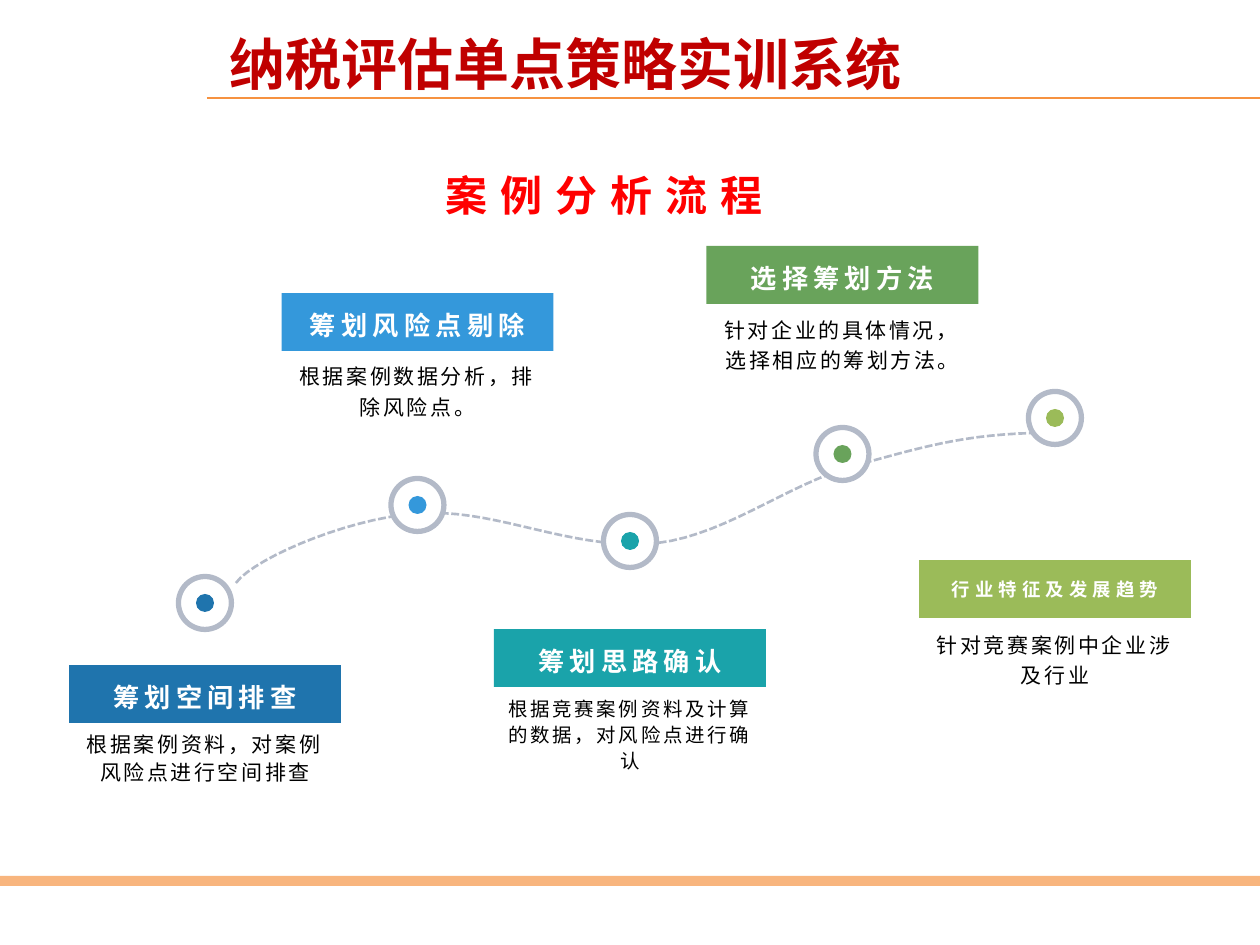
from pptx import Presentation
from pptx.dml.color import RGBColor
from pptx.enum.dml import MSO_LINE
from pptx.enum.shapes import MSO_CONNECTOR, MSO_SHAPE
from pptx.enum.text import MSO_ANCHOR, PP_ALIGN
from pptx.oxml.ns import qn
from pptx.util import Pt
from lxml.etree import SubElement

FONT = "Noto Sans CJK SC"
WHITE = RGBColor(0xFF, 0xFF, 0xFF)
BLACK = RGBColor(0x00, 0x00, 0x00)
RED = RGBColor(0xFF, 0x00, 0x00)
DARK_RED = RGBColor(0xC0, 0x00, 0x00)
ORANGE = RGBColor(0xF6, 0x92, 0x40)
GREY = RGBColor(0xB3, 0xBA, 0xC8)
NAVY = RGBColor(0x1F, 0x74, 0xAD)
BLUE = RGBColor(0x34, 0x98, 0xDB)
TEAL = RGBColor(0x1A, 0xA3, 0xAA)
GREEN = RGBColor(0x69, 0xA3, 0x5B)
LIME = RGBColor(0x9B, 0xBB, 0x59)

TITLE = "纳税评估单点策略实训系统"
HEADING = "案例分析流程"

STEPS = [
    dict(label="筹划空间排查", body="根据案例资料，对案例风险点进行空间排查", color=NAVY,
         node=603, bar=665, gap=0, size=12, spacing=1.1),
    dict(label="筹划风险点剔除", body="根据案例数据分析，排除风险点。", color=BLUE,
         node=505, bar=293, gap=2, size=12, spacing=1.2),
    dict(label="筹划思路确认", body="根据竞赛案例资料及计算的数据，对风险点进行确认", color=TEAL,
         node=541, bar=629, gap=2, size=11.1, spacing=1.1),
    dict(label="选择筹划方法", body="针对企业的具体情况，选择相应的筹划方法。", color=GREEN,
         node=454, bar=246, gap=2, size=12, spacing=1.2),
    dict(label="行业特征及发展趋势", body="针对竞赛案例中企业涉及行业", color=LIME,
         node=418, bar=560, gap=3, size=12, spacing=1.2,
         label_size=10.5, label_spacing=1.0),
]

CURVE = [(236, 583),
         (255, 557), (360, 513), (431, 513),
         (500, 512), (568, 547), (644, 544),
         (718, 542), (785, 484), (857, 465),
         (927, 446), (973, 431), (1067, 433)]
CURVE_PARTS = 16

FIRST_X, STEP_X = 205, 212.5
BAR_W, BAR_H, BODY_H = 272, 58, 93
RING, DOT = 53, 18


def px(n):
    return round(n * 914400 / 126)


def box(x, y, w, h):
    return [px(n) for n in (x, y, w, h)]


def write(sp, text, size, color, bold=False, tracking=0, align=PP_ALIGN.LEFT,
          spacing=1.0, anchor=MSO_ANCHOR.MIDDLE, wrap=True):
    tf = sp.text_frame
    tf.word_wrap, tf.vertical_anchor = wrap, anchor
    p = tf.paragraphs[0]
    p.alignment, p.line_spacing = align, spacing
    r = p.add_run()
    r.text = text
    for name, value in dict(name=FONT, size=Pt(size), bold=bold).items():
        setattr(r.font, name, value)
    r.font.color.rgb = color
    rpr = r._r.get_or_add_rPr()
    if tracking:
        rpr.set("spc", str(round(tracking * 100)))
    SubElement(rpr, qn("a:ea"), typeface=FONT)


def add_filled(kind, x, y, w, h, fill, outline=None):
    sp = shapes.add_shape(kind, *box(x, y, w, h))
    sp.shadow.inherit = False
    sp.fill.solid()
    sp.fill.fore_color.rgb = fill
    if outline is None:
        sp.line.fill.background()
    else:
        sp.line.color.rgb = outline
        sp.line.width = Pt(3)
    return sp


def add_disc(cx, cy, d, fill, outline=None):
    return add_filled(MSO_SHAPE.OVAL, cx - d / 2, cy - d / 2, d, d, fill, outline)


def bezier(points, t):
    weights = ((1 - t) ** 3, 3 * t * (1 - t) ** 2, 3 * t * t * (1 - t), t ** 3)
    return tuple(px(sum(w * p[i] for w, p in zip(weights, points))) for i in (0, 1))


def add_curve():
    points = [bezier(CURVE[i:i + 4], k / CURVE_PARTS)
              for i in range(0, len(CURVE) - 1, 3)
              for k in range(1, CURVE_PARTS + 1)]
    start_x, start_y = (px(n) for n in CURVE[0])
    builder = shapes.build_freeform(start_x, start_y)
    builder.add_line_segments(points, close=False)
    sp = builder.convert_to_shape()
    sp.shadow.inherit = False
    sp.fill.background()
    sp.line.color.rgb = GREY
    sp.line.width = Pt(1.5)
    sp.line.dash_style = MSO_LINE.SQUARE_DOT


def add_step(cx, step):
    left = cx - BAR_W / 2
    add_disc(cx, step["node"], RING, WHITE, GREY)
    add_disc(cx, step["node"], DOT, step["color"])
    bar = add_filled(MSO_SHAPE.RECTANGLE, left, step["bar"], BAR_W, BAR_H, step["color"])
    write(bar, step["label"], step.get("label_size", 15), WHITE, bold=True, tracking=3,
          align=PP_ALIGN.CENTER, spacing=step.get("label_spacing", 1.2))
    body = shapes.add_textbox(*box(left, step["bar"] + BAR_H + step["gap"], BAR_W, BODY_H))
    tf = body.text_frame
    tf.margin_left = tf.margin_right = px(9)
    tf.margin_top = tf.margin_bottom = px(6)
    write(body, step["body"], step["size"], BLACK, tracking=1.5, align=PP_ALIGN.CENTER,
          spacing=step["spacing"], anchor=MSO_ANCHOR.TOP)


prs = Presentation()
prs.slide_width, prs.slide_height = px(1260), px(945)
slide = prs.slides.add_slide(prs.slide_layouts[5])
shapes = slide.shapes

title = shapes.title
title.left, title.top, title.width, title.height = box(217, 29, 1043, 69)
write(title, TITLE, 32, DARK_RED, bold=True)

rule = shapes.add_connector(MSO_CONNECTOR.STRAIGHT, px(207), px(98), px(1260), px(98))
rule.line.color.rgb = ORANGE
rule.line.width = Pt(0.75)
SubElement(rule._element.spPr, qn("a:effectLst"))

footer = add_filled(MSO_SHAPE.RECTANGLE, 0, 876, 1260, 10, ORANGE)
footer_color = footer._element.spPr.find(qn("a:solidFill"))[0]
SubElement(footer_color, qn("a:alpha"), val="67000")

heading = shapes.add_textbox(*box(433, 158, 354, 125))
write(heading, HEADING, 24, RED, bold=True, tracking=7.5, spacing=1.1,
      anchor=MSO_ANCHOR.TOP, wrap=False)

add_curve()
for i, step in enumerate(STEPS):
    add_step(FIRST_X + i * STEP_X, step)

prs.save("out.pptx")
